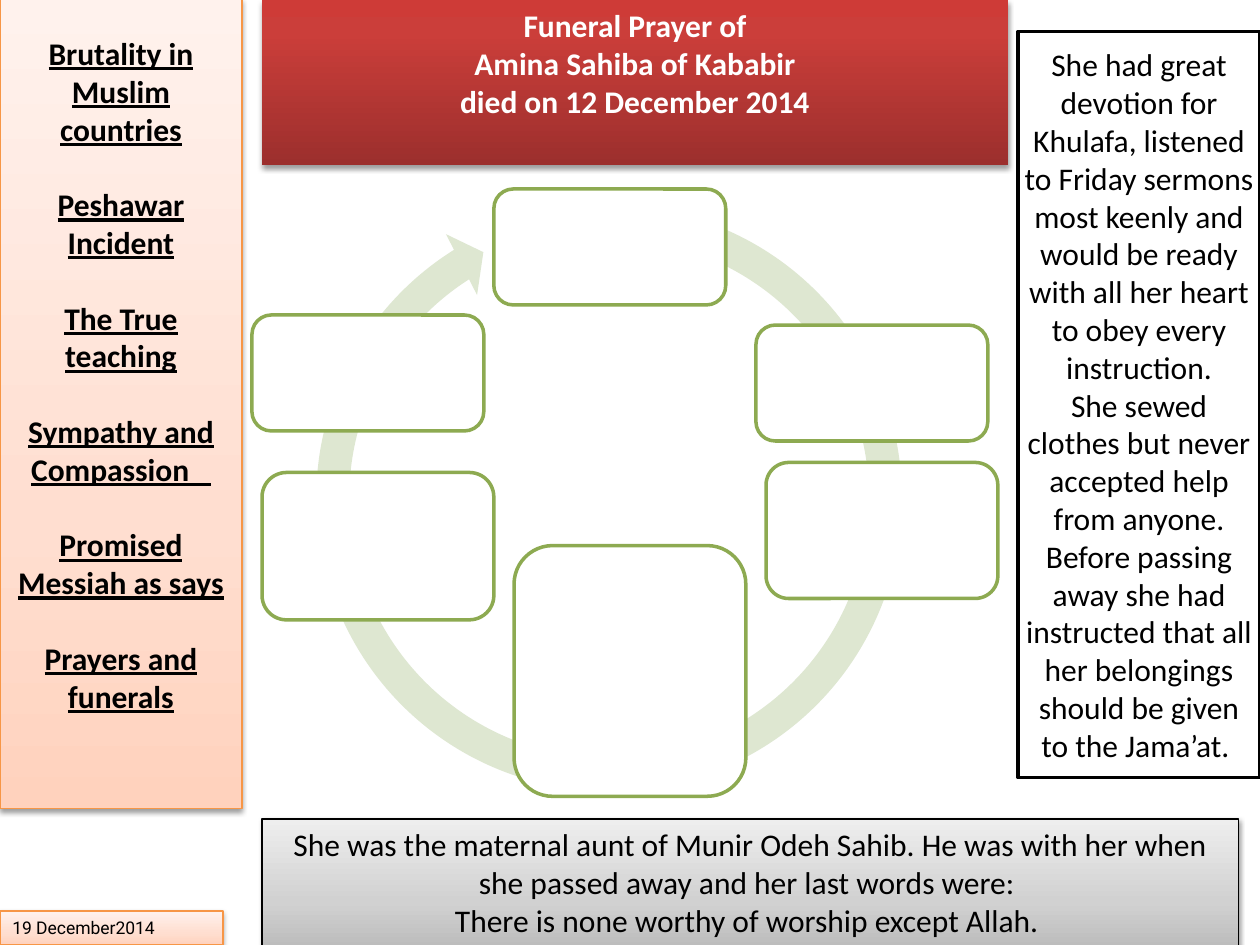
"""Builds the funeral prayer slide with a cycle of empty boxes."""
from lxml import etree
from pptx import Presentation
from pptx.dml.color import RGBColor
from pptx.enum.shapes import MSO_SHAPE
from pptx.enum.text import MSO_ANCHOR, MSO_AUTO_SIZE, PP_ALIGN
from pptx.oxml.ns import qn
from pptx.util import Inches, Pt

RECT, ROUND, ARROW = MSO_SHAPE.RECTANGLE, MSO_SHAPE.ROUNDED_RECTANGLE, MSO_SHAPE.CIRCULAR_ARROW
TOP, MIDDLE = MSO_ANCHOR.TOP, MSO_ANCHOR.MIDDLE
LEFT, CENTER = PP_ALIGN.LEFT, PP_ALIGN.CENTER
NO_FIT = MSO_AUTO_SIZE.NONE

COLORS = {
    "white": "FFFFFF", "black": "000000", "orange": "F79646",
    "green": "8DAA51", "pale_green": "DEE7D1",
}
GRADIENTS = {
    "red": [(0, "9C2F2D"), (80, "CB3E3A"), (100, "CE3B37")],
    "grey": [(0, "BDBDBD"), (35, "D1D1D1"), (100, "EEEEEE")],
    "peach": [(0, "FFD2BD"), (35, "FFDED0"), (100, "FFF2ED")],
}


def style(shape, fill, line=None, width=0.75):
    """Set fill, outline and, on gradient panels, a soft shadow."""
    shape.shadow.inherit = False
    if line:
        shape.line.color.rgb = RGBColor.from_string(COLORS[line])
        shape.line.width = Pt(width)
    else:
        shape.line.fill.background()
    if fill in COLORS:
        shape.fill.solid()
        shape.fill.fore_color.rgb = RGBColor.from_string(COLORS[fill])
        return
    shape.fill.gradient()
    shape.fill.gradient_angle = 90
    spPr = shape._element.spPr
    stops = spPr.find(qn("a:gradFill")).find(qn("a:gsLst"))
    stops.clear()
    for pos, color in GRADIENTS[fill]:
        gs = etree.SubElement(stops, qn("a:gs"), pos=str(pos * 1000))
        etree.SubElement(gs, qn("a:srgbClr"), val=color)
    shadow = etree.SubElement(spPr.find(qn("a:effectLst")), qn("a:outerShdw"), blurRad=str(Pt(3.1)),
                              dist=str(Pt(1.7)), dir="5400000", rotWithShape="0")
    color = etree.SubElement(shadow, qn("a:srgbClr"), val=COLORS["black"])
    etree.SubElement(color, qn("a:alpha"), val="38000")


def write(shape, lines, size=18, font="Calibri", color="black", bold=False, underline=False,
          align=CENTER, anchor=TOP, gap=0, wrap=True):
    """Fill a shape with one paragraph per line."""
    tf = shape.text_frame
    tf.text = "\n".join(lines)
    tf.auto_size = NO_FIT
    tf.word_wrap = wrap
    tf.vertical_anchor = anchor
    for i, p in enumerate(tf.paragraphs):
        p.alignment = align
        p.space_before = Pt(gap if i else 0)
        for r in p.runs:
            r.font.name, r.font.size = font, Pt(size)
            r.font.bold, r.font.underline = bold, underline
            r.font.color.rgb = RGBColor.from_string(COLORS[color])
    return tf


prs = Presentation()
prs.slide_width, prs.slide_height = Inches(10), Inches(7.5)
s = prs.slides.add_slide(prs.slide_layouts[5])

title = s.shapes.title
title.left, title.top, title.width, title.height = Inches(2.08), Inches(0), Inches(5.92), Inches(1.31)
style(title, "red")
write(title, ["Funeral Prayer of", "Amina Sahiba of Kababir", "died on 12 December 2014"],
      color="white", bold=True)

cycle = s.shapes.add_group_shape()
arrow = cycle.shapes.add_shape(ARROW, Inches(2.37), Inches(1.49), Inches(4.93), Inches(4.93))
for i, value in enumerate([0.053, 3.126, 142.633, 171.064, 0.055]):
    arrow.adjustments[i] = value
style(arrow, "pale_green")
for x, y, h in [(3.92, 1.5, 0.92), (6, 2.58, 0.92), (6.08, 3.67, 1.08),
                (4.08, 4.33, 1.99), (2.08, 3.75, 1.17), (2, 2.5, 0.92)]:
    box = cycle.shapes.add_shape(ROUND, Inches(x), Inches(y), Inches(1.84), Inches(h))
    style(box, "white", "green", 2)

story = s.shapes.add_shape(RECT, Inches(8.08), Inches(0.25), Inches(1.92), Inches(5.92))
style(story, "white", "black", 2)
tf = write(story, [
    "She had great devotion for Khulafa, listened to Friday sermons most keenly and would be ready "
    "with all her heart to obey every instruction.",
    "She sewed clothes but never accepted help from anyone. Before passing away she had instructed "
    "that all her belongings should be given to the Jama’at. ",
], anchor=MIDDLE)
tf.margin_left = tf.margin_right = tf.margin_top = tf.margin_bottom = Inches(0.03)

last_words = s.shapes.add_shape(RECT, Inches(2.08), Inches(6.5), Inches(7.75), Inches(1.01))
style(last_words, "grey", "black")
write(last_words, [
    "She was the maternal aunt of Munir Odeh Sahib. He was with her when she passed away and her "
    "last words were: ",
    "There is none worthy of worship except Allah. ",
])

topics = s.shapes.add_shape(RECT, Inches(0), Inches(-0.01), Inches(1.92), Inches(6.43))
style(topics, "peach", "orange")
tf = write(topics, ["Brutality in Muslim countries", "Peshawar Incident", "The True teaching",
                    "Sympathy and Compassion   ", "Promised Messiah as says", "Prayers and funerals"],
           bold=True, underline=True, gap=21.6)
tf.margin_top = Inches(0.28)

date = s.shapes.add_shape(RECT, Inches(0), Inches(7.23), Inches(1.77), Inches(0.27))
style(date, "peach", "orange")
write(date, ["19 December2014"], size=10, font="Roboto", align=LEFT, anchor=MIDDLE, wrap=False)

prs.save("out.pptx")
